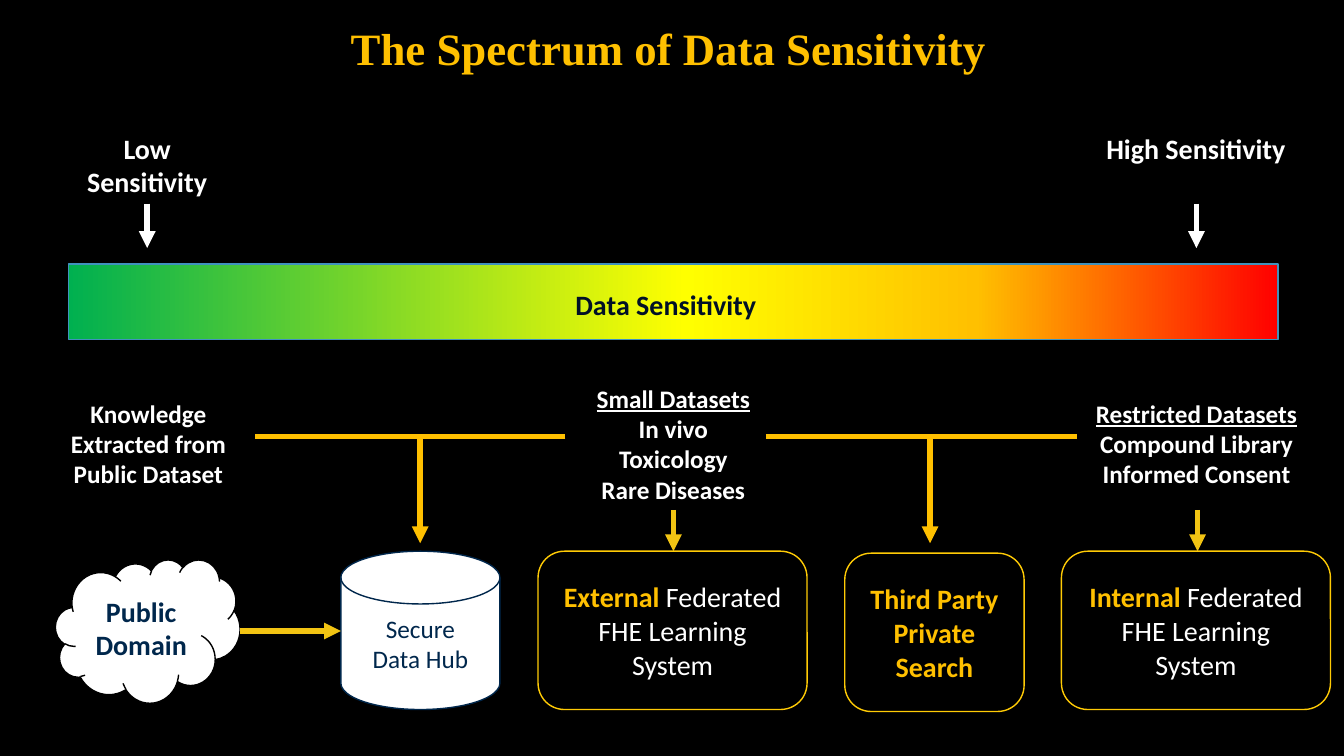
from lxml.etree import SubElement
from pptx import Presentation
from pptx.dml.color import RGBColor
from pptx.enum.shapes import MSO_CONNECTOR, MSO_SHAPE
from pptx.enum.text import MSO_ANCHOR, MSO_AUTO_SIZE, PP_ALIGN
from pptx.oxml.ns import qn
from pptx.util import Cm, Pt

WHITE, BLACK, NAVY, INK = "FFFFFF", "000000", "00274C", "001027"
AMBER, GOLD, MAIZE, BLUE = "FFC000", "F2C413", "FFCB05", "4092BD"
SPECTRUM = [(0, "00B050"), (51, "FFFF00"), (75, AMBER), (100, "FF0000")]


def rgb(value):
    return RGBColor.from_string(value)


def add_span(para, text, size=20, color=WHITE, bold=True, underline=False, font="Calibri"):
    span = para.add_run()
    span.text = text
    span.font.name = font
    span.font.size = Pt(size)
    span.font.color.rgb = rgb(color)
    span.font.bold = bold
    span.font.underline = underline


class SpectrumSlide:
    line_width = Pt(1)
    arrow_width = Pt(4)

    def __init__(self, deck):
        self.page = deck.slides.add_slide(deck.slide_layouts[6])
        background = self.page.background.fill
        background.solid()
        background.fore_color.rgb = rgb(BLACK)

    def fill_frame(self, frame, paragraphs, align=PP_ALIGN.CENTER, **style):
        for index, spans in enumerate(paragraphs):
            para = frame.add_paragraph() if index else frame.paragraphs[0]
            para.alignment = align
            for text, changes in spans:
                add_span(para, text, **{**style, **changes})

    def text(self, place, paragraphs, wrap=True, **style):
        frame = self.page.shapes.add_textbox(*map(Cm, place)).text_frame
        frame.word_wrap = wrap
        frame.auto_size = MSO_AUTO_SIZE.SHAPE_TO_FIT_TEXT
        self.fill_frame(frame, paragraphs, **style)

    def shape(self, kind, place, outline, fill=None, paragraphs=(), **style):
        box = self.page.shapes.add_shape(kind, *map(Cm, place))
        box.shadow.inherit = False
        if fill:
            box.fill.solid()
            box.fill.fore_color.rgb = rgb(fill)
        else:
            box.fill.background()
        box.line.color.rgb = rgb(outline)
        box.line.width = self.line_width
        box.text_frame.vertical_anchor = MSO_ANCHOR.MIDDLE
        self.fill_frame(box.text_frame, paragraphs, **style)
        return box

    def gradient_bar(self, place, outline, stops):
        bar = self.shape(MSO_SHAPE.RECTANGLE, place, outline)
        bar.fill.gradient()
        bar.fill.gradient_angle = 0
        stop_list = next(bar._element.iter(qn("a:gsLst")))
        for stop in list(stop_list):
            stop_list.remove(stop)
        for percent, color in stops:
            stop = SubElement(stop_list, qn("a:gs"), pos=str(percent * 1000))
            SubElement(stop, qn("a:srgbClr"), val=color)

    def connector(self, start, end, color, arrow=True, bent=False):
        kind = MSO_CONNECTOR.ELBOW if bent else MSO_CONNECTOR.STRAIGHT
        link = self.page.shapes.add_connector(kind, *map(Cm, start + end))
        link.line.color.rgb = rgb(color)
        link.line.width = self.arrow_width
        properties = link._element.spPr
        if bent:
            properties.find(qn("a:prstGeom")).set("prst", "bentConnector2")
        if arrow:
            SubElement(properties.find(qn("a:ln")), qn("a:tailEnd"), type="triangle")
        SubElement(properties, qn("a:effectLst"))


def plain(*lines):
    return [[(line, {})] for line in lines]


def headed(heading, *lines):
    return [[(heading, {"underline": True})]] + plain(*lines)


def learning_system(scope):
    return [[(scope, {"color": AMBER}), (" Federated FHE Learning System", {"bold": False})]]


def main():
    deck = Presentation()
    deck.slide_width, deck.slide_height = Cm(33.87), Cm(19.05)
    slide = SpectrumSlide(deck)

    slide.gradient_bar((1.73, 6.65, 30.48, 1.9), BLUE, SPECTRUM)
    slide.text((14.25, 7.11, 5.41, 1.12), plain("Data Sensitivity"),
               wrap=False, align=PP_ALIGN.LEFT, color=INK)
    slide.text((8.59, 0.41, 16.66, 1.63), plain("The Spectrum of Data Sensitivity"),
               align=PP_ALIGN.LEFT, size=32, color=AMBER, font="Times New Roman")

    for label, left, width, arrow_x in [("Low Sensitivity", 1.3, 4.82, 3.71),
                                        ("High Sensitivity", 27.51, 5.26, 30.15)]:
        slide.text((left, 3.18, width, 1.96), plain(label))
        slide.connector((arrow_x, 5.13), (arrow_x, 6.25), WHITE)

    datasets = [
        ((1.02, 9.91, 5.44, 2.57), plain("Knowledge Extracted from Public Dataset")),
        ((14.25, 9.53, 5.44, 3.33),
         headed("Small Datasets", "In vivo", "Toxicology", "Rare Diseases")),
        ((27.13, 9.91, 6.05, 2.57),
         headed("Restricted Datasets", "Compound Library", "Informed Consent")),
    ]
    for place, paragraphs in datasets:
        slide.text(place, paragraphs, size=18)

    slide.shape(MSO_SHAPE.CLOUD, (1.4, 14.1, 4.65, 3.61), BLACK, WHITE,
                plain("Public Domain"), color=NAVY)
    slide.shape(MSO_SHAPE.FLOWCHART_MAGNETIC_DISK, (8.59, 13.89, 4.01, 3.99), NAVY, WHITE,
                plain("Secure", "Data Hub"), size=18, color=NAVY, bold=False)
    for scope, left in [("External", 13.56), ("Internal", 26.75)]:
        slide.shape(MSO_SHAPE.ROUNDED_RECTANGLE, (left, 13.89, 6.78, 3.99), MAIZE,
                    paragraphs=learning_system(scope))
    slide.shape(MSO_SHAPE.ROUNDED_RECTANGLE, (21.29, 13.94, 4.52, 3.99), MAIZE,
                paragraphs=plain("Third Party Private Search"), color=AMBER)

    for left, middle, right in [(6.43, 10.59, 14.25), (19.3, 23.44, 27.13)]:
        slide.connector((left, 11), (middle, 13.69), AMBER, bent=True)
        slide.connector((right, 11), (middle, 11), AMBER, arrow=False)
    slide.connector((6.05, 15.9), (8.59, 15.9), GOLD)
    for arrow_x in (16.97, 30.18):
        slide.connector((arrow_x, 12.85), (arrow_x, 13.89), GOLD)

    deck.save("out.pptx")


if __name__ == "__main__":
    main()
